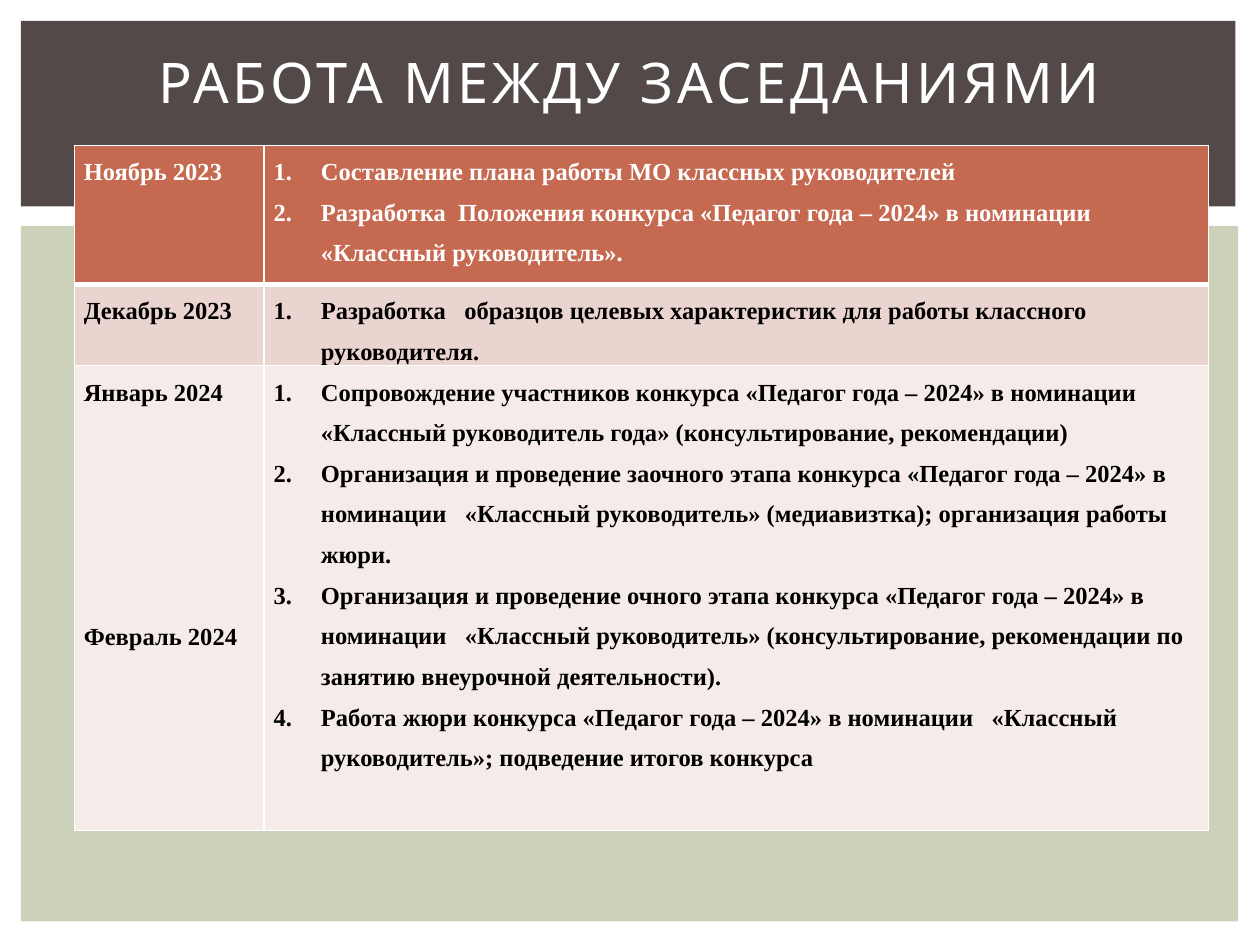
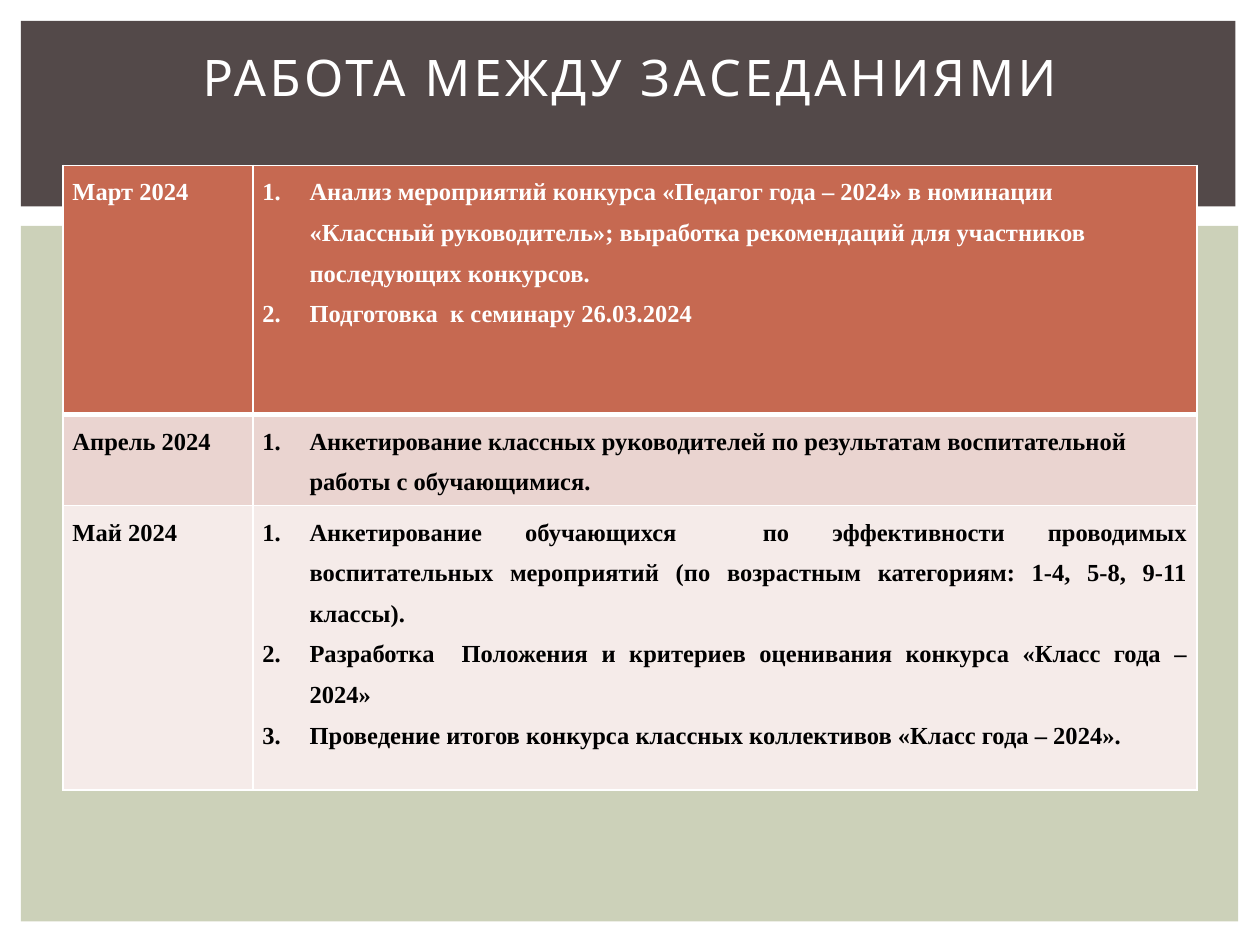
"""Build two slides with the month-by-month plan of work between meetings."""
from lxml.etree import SubElement
from pptx import Presentation
from pptx.dml.color import RGBColor
from pptx.enum.shapes import MSO_SHAPE
from pptx.enum.text import MSO_ANCHOR, PP_ALIGN
from pptx.oxml.ns import qn
from pptx.util import Pt

WHITE = RGBColor(0xFF, 0xFF, 0xFF)
BLACK = RGBColor(0x00, 0x00, 0x00)
SAGE = RGBColor(0xCC, 0xD1, 0xB9)
BROWN = RGBColor(0x53, 0x49, 0x49)
TERRACOTTA = RGBColor(0xC6, 0x69, 0x51)
ROSE = RGBColor(0xEA, 0xD4, 0xD0)
PALE_ROSE = RGBColor(0xF5, 0xEB, 0xE9)

TITLE = "РАБОТА МЕЖДУ ЗАСЕДАНИЯМИ"
TITLE_FONT = "Karla"
BODY_FONT = "Times New Roman"
BANDS = [(12, 129, 695.5, 397.5, SAGE), (12, 12, 694, 106, BROWN)]
COLUMN_WIDTHS = [108.5, 539.5]
ROW_FILLS = [TERRACOTTA, ROSE, PALE_ROSE]
CELL_MARGIN = 5.4
NUMBER_INDENT = 27
LATER_MONTH_GAP = 116.2

SLIDES = [
    {
        "title_size": 32, "title_height": 49.5, "left": 42.5, "top": 83,
        "row_heights": [79.5, 46.5, 265.5], "last_align": PP_ALIGN.LEFT,
        "plan": [
            (["Ноябрь 2023"], [
                "Составление плана работы МО классных руководителей",
                "Разработка  Положения конкурса «Педагог года – 2024» в номинации   «Классный руководитель».",
            ]),
            (["Декабрь 2023"], [
                "Разработка   образцов целевых характеристик для работы классного руководителя.",
            ]),
            (["Январь 2024", "Февраль 2024"], [
                "Сопровождение участников конкурса «Педагог года – 2024» в номинации   "
                "«Классный руководитель года» (консультирование, рекомендации)",
                "Организация и проведение заочного этапа конкурса «Педагог года – 2024» в номинации   "
                "«Классный руководитель» (медиавизтка); организация работы жюри.",
                "Организация и проведение очного этапа конкурса «Педагог года – 2024» в номинации   "
                "«Классный руководитель» (консультирование, рекомендации по занятию внеурочной деятельности).",
                "Работа жюри конкурса «Педагог года – 2024» в номинации   "
                "«Классный руководитель»; подведение итогов конкурса",
            ]),
        ],
    },
    {
        "title_size": 28.8, "title_height": 44, "left": 36, "top": 94.5,
        "row_heights": [142.5, 52, 162.5], "last_align": PP_ALIGN.JUSTIFY,
        "plan": [
            (["Март 2024"], [
                "Анализ мероприятий конкурса «Педагог года – 2024» в номинации   «Классный руководитель»; "
                "выработка рекомендаций для участников последующих конкурсов.",
                "Подготовка  к семинару 26.03.2024",
            ]),
            (["Апрель 2024"], [
                "Анкетирование классных руководителей по результатам воспитательной работы с обучающимися.",
            ]),
            (["Май 2024"], [
                "Анкетирование обучающихся  по эффективности проводимых воспитательных мероприятий "
                "(по возрастным категориям: 1-4, 5-8, 9-11 классы).",
                "Разработка  Положения и критериев оценивания конкурса «Класс года – 2024»",
                "Проведение итогов конкурса классных коллективов «Класс года – 2024».",
            ]),
        ],
    },
]


def style_cell(cell, fill, row_index):
    """Give a cell its white borders, fill and margins."""
    properties = cell._tc.get_or_add_tcPr()
    widths = {"L": 1, "R": 1, "T": 3 if row_index == 1 else 1, "B": 3 if row_index == 0 else 1}
    for side, width in widths.items():
        border = SubElement(properties, qn(f"a:ln{side}"), w=str(Pt(width)))
        SubElement(SubElement(border, qn("a:solidFill")), qn("a:srgbClr"), val=str(WHITE))
    cell.fill.solid()
    cell.fill.fore_color.rgb = fill
    cell.margin_left = cell.margin_right = Pt(CELL_MARGIN)
    cell.margin_top = cell.margin_bottom = 0


def write_cell(cell, lines, color, align, numbered):
    """Write bold paragraphs, with hanging numbers if asked."""
    cell.text_frame.text = "\n".join(lines)
    for index, paragraph in enumerate(cell.text_frame.paragraphs):
        paragraph.line_spacing = 1.5
        paragraph.alignment = align
        if numbered:
            properties = paragraph._p.get_or_add_pPr()
            properties.set("marL", str(Pt(NUMBER_INDENT)))
            properties.set("indent", str(-Pt(NUMBER_INDENT)))
            SubElement(properties, qn("a:buFont"), typeface="+mj-lt")
            SubElement(properties, qn("a:buAutoNum"), type="arabicPeriod")
        elif index:
            paragraph.space_before = Pt(LATER_MONTH_GAP)
        font = paragraph.runs[0].font
        font.name, font.size, font.bold = BODY_FONT, Pt(14), True
        font.color.rgb = color


presentation = Presentation()
presentation.slide_width, presentation.slide_height = Pt(720), Pt(540)

for content in SLIDES:
    slide = presentation.slides.add_slide(presentation.slide_layouts[6])

    for left, top, width, height, color in BANDS:
        band = slide.shapes.add_shape(MSO_SHAPE.RECTANGLE, Pt(left), Pt(top), Pt(width), Pt(height))
        band.shadow.inherit = False
        band.fill.solid()
        band.fill.fore_color.rgb = color
        band.line.fill.background()

    plan_table = slide.shapes.add_table(
        len(content["plan"]), len(COLUMN_WIDTHS), Pt(content["left"]), Pt(content["top"]),
        Pt(sum(COLUMN_WIDTHS)), Pt(sum(content["row_heights"]))).table
    for column, width in zip(plan_table.columns, COLUMN_WIDTHS):
        column.width = Pt(width)
    for row_index, (months, tasks) in enumerate(content["plan"]):
        plan_table.rows[row_index].height = Pt(content["row_heights"][row_index])
        color = WHITE if row_index == 0 else BLACK
        task_align = content["last_align"] if row_index == 2 else PP_ALIGN.LEFT
        month_cell, task_cell = plan_table.rows[row_index].cells
        for cell in (month_cell, task_cell):
            style_cell(cell, ROW_FILLS[row_index], row_index)
        write_cell(month_cell, months, color, PP_ALIGN.LEFT, False)
        write_cell(task_cell, tasks, color, task_align, True)

    title = slide.shapes.add_textbox(Pt(36), Pt(21.5), Pt(648), Pt(content["title_height"])).text_frame
    title.word_wrap = True
    title.vertical_anchor = MSO_ANCHOR.MIDDLE
    title.text = TITLE
    title.paragraphs[0].alignment = PP_ALIGN.CENTER
    title_run = title.paragraphs[0].runs[0]
    title_run.font.name, title_run.font.size = TITLE_FONT, Pt(content["title_size"])
    title_run.font.color.rgb = WHITE
    title_run._r.get_or_add_rPr().set("spc", "200")

presentation.save("out.pptx")
